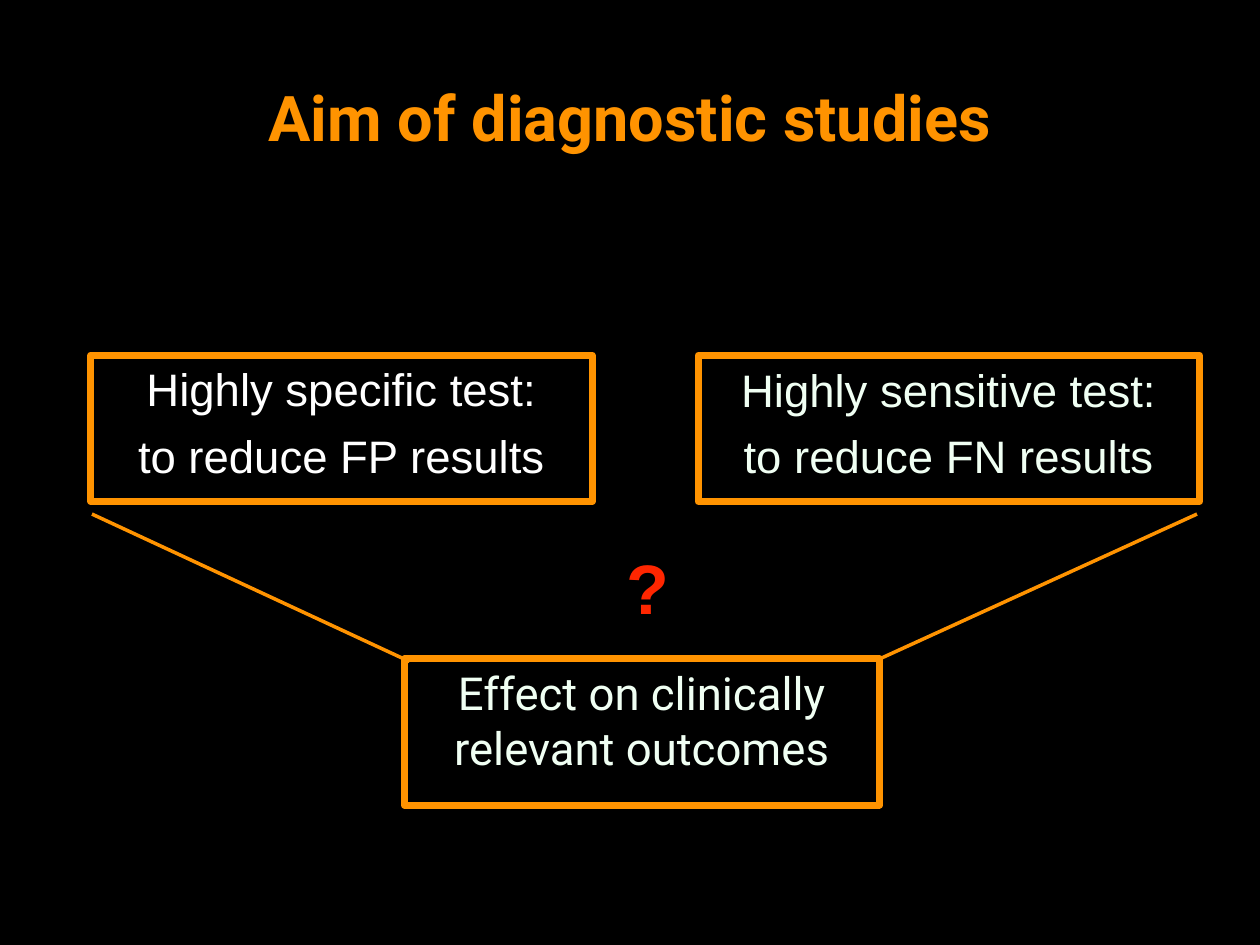
import pptx
import pptx.util
import pptx.dml.color
import pptx.enum.shapes
import pptx.enum.text
import pptx.oxml.ns
import lxml.etree

COLUMNS, ROWS = 100, 75
ORANGE, RED, WHITE, MINT = "FF9300", "FF2600", "FFFFFF", "F0FFF3"
BOX_TOP, BOX_HEIGHT = 28.2, 11.6
OUTCOME_AREA = (32.1, 52.3, 37.7, BOX_HEIGHT)

TITLE = {"lines": ["Aim of diagnostic studies"], "area": (5, 3, 90, 12.5),
         "font": {"name": "Roboto", "size": 36, "bold": True, "color": ORANGE},
         "align": "CENTER", "anchor": "MIDDLE"}
SENSITIVE = {"lines": ["Highly sensitive test:", "to reduce FN results"],
             "area": (55.4, BOX_TOP, 39.8, BOX_HEIGHT),
             "font": {"name": "Arial", "size": 26, "color": MINT},
             "align": "CENTER", "before": 7, "outline": 4}
SPECIFIC = {"lines": ["Highly specific test:", "to reduce FP results"],
            "area": (7.2, BOX_TOP, 39.8, BOX_HEIGHT),
            "font": {"name": "Arial", "size": 26, "color": WHITE},
            "align": "CENTER", "before": 7, "outline": 4}
OUTCOME = {"lines": ["Effect on clinically relevant outcomes"], "area": OUTCOME_AREA,
           "font": {"name": "Roboto", "size": 26, "color": MINT},
           "align": "CENTER", "before": 6, "outline": 4}
QUESTION = {"lines": ["?"], "area": (49.2, 43.1, 4.5, 7.1),
            "font": {"name": "Arial", "size": 40, "bold": True, "color": RED},
            "align": "LEFT", "spacing": 0.97, "wrap": False}
LINKS = [((69.8, 52.3), (95, 40.8)), ((7.3, 40.8), (32.5, 52.5))]

deck = pptx.Presentation()
deck.slide_width = pptx.util.Inches(10)
deck.slide_height = pptx.util.Inches(7.5)


def rgb(value):
    return pptx.dml.color.RGBColor.from_string(value)


def place(x, y):
    return round(deck.slide_width * x / COLUMNS), round(deck.slide_height * y / ROWS)


def set_all(target, values):
    for key, value in values.items():
        setattr(target, key, value)


def draw_line(line, width):
    line.color.rgb = rgb(ORANGE)
    line.width = pptx.util.Pt(width)


def write(holder, part):
    left, top, width, height = part["area"]
    holder.left, holder.top = place(left, top)
    holder.width, holder.height = place(width, height)
    if "outline" in part:
        holder.fill.background()
        draw_line(holder.line, part["outline"])
        lxml.etree.SubElement(holder.line._get_or_add_ln(), pptx.oxml.ns.qn("a:round"))
        holder.shadow.inherit = False
    frame = holder.text_frame
    margins = ("margin_left", "margin_right", "margin_top", "margin_bottom")
    set_all(frame, dict.fromkeys(margins, pptx.util.Inches(0.05)))
    set_all(frame, {
        "word_wrap": part.get("wrap", True),
        "auto_size": pptx.enum.text.MSO_AUTO_SIZE.NONE,
        "vertical_anchor": pptx.enum.text.MSO_ANCHOR[part.get("anchor", "TOP")],
        "text": "\n".join(part["lines"])})
    font = dict(part["font"])
    color = font.pop("color")
    font["size"] = pptx.util.Pt(font["size"])
    for paragraph in frame.paragraphs:
        set_all(paragraph, {
            "alignment": pptx.enum.text.PP_ALIGN[part["align"]],
            "space_before": pptx.util.Pt(part.get("before", 0)),
            "line_spacing": part.get("spacing", 1.0)})
        properties = paragraph._p.get_or_add_pPr()
        properties.set("marL", "0")
        properties.set("indent", "0")
        lxml.etree.SubElement(properties, pptx.oxml.ns.qn("a:buNone"))
        for run in paragraph.runs:
            set_all(run.font, font)
            run.font.color.rgb = rgb(color)


def link(start, end):
    connector = slide.shapes.add_connector(
        pptx.enum.shapes.MSO_CONNECTOR.STRAIGHT, *place(*start), *place(*end))
    draw_line(connector.line, 2)
    lxml.etree.SubElement(connector._element.spPr, pptx.oxml.ns.qn("a:effectLst"))


slide = deck.slides.add_slide(deck.slide_layouts[1])
slide.background.fill.solid()
slide.background.fill.fore_color.rgb = rgb("000000")

write(slide.shapes.title, TITLE)
write(slide.placeholders[1], SENSITIVE)
for box in (SPECIFIC, OUTCOME):
    write(slide.shapes.add_shape(pptx.enum.shapes.MSO_SHAPE.RECTANGLE, 0, 0, 0, 0), box)
for start, end in LINKS:
    link(start, end)
write(slide.shapes.add_textbox(0, 0, 0, 0), QUESTION)

deck.save("out.pptx")
